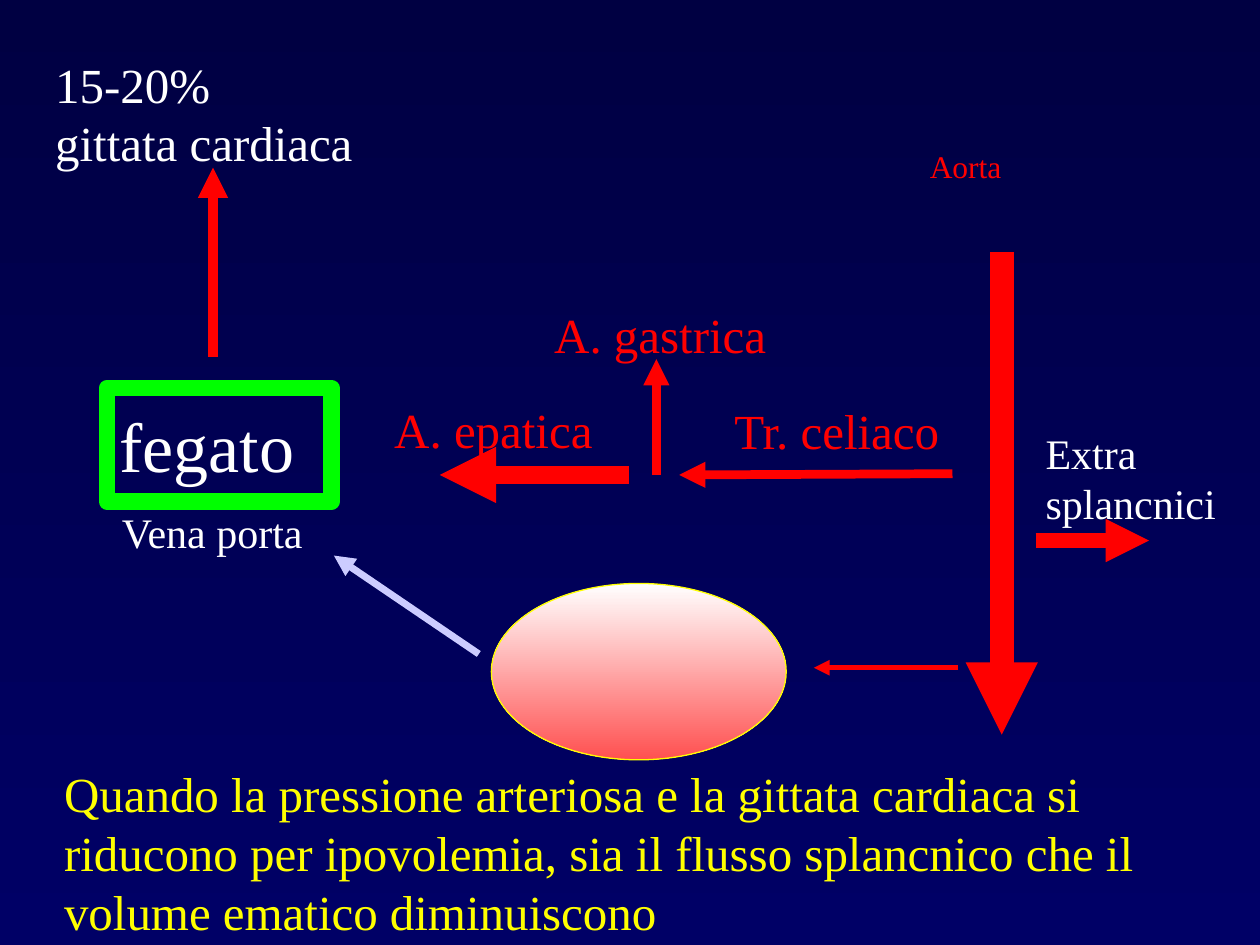
from dataclasses import dataclass

from lxml.etree import SubElement
from pptx import Presentation
from pptx.dml.color import RGBColor
from pptx.enum.shapes import MSO_CONNECTOR, MSO_SHAPE
from pptx.enum.text import MSO_ANCHOR, MSO_AUTO_SIZE, PP_ALIGN
from pptx.oxml.ns import qn
from pptx.util import Pt


@dataclass(frozen=True)
class Theme:
    font: str = "Times New Roman"
    small: int = 18
    label: int = 24
    body: int = 28
    organ: int = 40
    white: str = "FFFFFF"
    artery: str = "FF0000"
    vein: str = "CCCCFF"
    liver: str = "00FF00"
    note: str = "FFFF00"
    bowel: str = "FF5050"
    sky_top: str = "000042"
    sky_bottom: str = "000066"


THEME = Theme()


def rgb(value):
    return RGBColor.from_string(value)


def fill_downwards(fill, top, bottom):
    """Fill with a vertical gradient from top to bottom."""
    fill.gradient()
    fill.gradient_angle = 270
    for stop, color, position in zip(fill.gradient_stops, (top, bottom), (0, 1)):
        stop.color.rgb = rgb(color)
        stop.position = position


def write(frame, text, size, color, wrap=False):
    frame.text = text
    frame.word_wrap = wrap
    frame.auto_size = MSO_AUTO_SIZE.SHAPE_TO_FIT_TEXT
    for paragraph in frame.paragraphs:
        paragraph.alignment = PP_ALIGN.LEFT
        for run in paragraph.runs:
            run.font.name = THEME.font
            run.font.size = Pt(size)
            run.font.color.rgb = rgb(color)


def add_label(slide, text, box, size, color, wrap=False):
    label = slide.shapes.add_textbox(*map(Pt, box))
    write(label.text_frame, text, size, color, wrap)


def add_flow(slide, start, end, width, color=THEME.artery):
    """Draw a blood-flow arrow from start to end."""
    flow = slide.shapes.add_connector(
        MSO_CONNECTOR.STRAIGHT, *map(Pt, (*start, *end)))
    flow.line.width = Pt(width)
    flow.line.color.rgb = rgb(color)
    SubElement(flow.line._get_or_add_ln(), qn("a:tailEnd"), type="triangle")
    SubElement(flow._element.spPr, qn("a:effectLst"))


def add_organ(slide, kind, box, line_color, line_width):
    organ = slide.shapes.add_shape(kind, *map(Pt, box))
    organ.shadow.inherit = False
    organ.fill.background()
    organ.line.color.rgb = rgb(line_color)
    organ.line.width = Pt(line_width)
    return organ


def add_liver(slide):
    liver = add_organ(slide, MSO_SHAPE.RECTANGLE, (61.2, 221.8, 128.2, 64.8),
                      THEME.liver, 9.5)
    write(liver.text_frame, "fegato", THEME.organ, THEME.white)
    liver.text_frame.vertical_anchor = MSO_ANCHOR.MIDDLE


def add_bowel(slide):
    bowel = add_organ(slide, MSO_SHAPE.OVAL, (280.8, 333.4, 168.5, 100.8),
                      THEME.note, 0.75)
    fill_downwards(bowel.fill, THEME.white, THEME.bowel)


def main():
    deck = Presentation()
    deck.slide_width, deck.slide_height = Pt(720), Pt(540)
    slide = deck.slides.add_slide(deck.slide_layouts[6])
    fill_downwards(slide.background.fill, THEME.sky_top, THEME.sky_bottom)

    add_flow(slide, (273.6, 373.7), (190.8, 317.5), 4, THEME.vein)
    add_liver(slide)
    add_bowel(slide)

    arteries = [
        ((121.7, 203.8), (121.7, 95.8), 5.75),
        ((572.4, 144), (572.4, 419.8), 13.75),
        ((544.3, 270.7), (388.1, 271.4), 5),
        ((359.3, 271.4), (251.3, 271.4), 10.75),
        ((375.1, 271.4), (375.1, 205.2), 5),
        ((547.2, 381.6), (465.1, 381.6), 3),
        ((591.8, 308.9), (656.6, 308.9), 8.25),
    ]
    for start, end, width in arteries:
        add_flow(slide, start, end, width)

    labels = [
        ("Vena porta", (62.6, 285.8, 129.6, 36), THEME.label, THEME.white),
        ("Aorta", (524.2, 80.6, 94.3, 45.4), THEME.small, THEME.artery),
        ("Extra\nsplancnici", (590.4, 240.5, 117.4, 64.8),
         THEME.label, THEME.white),
        ("A. epatica", (218.2, 224.6, 133.9, 41), THEME.body, THEME.artery),
        ("A. gastrica", (309.6, 170.6, 143.3, 41), THEME.body, THEME.artery),
        ("Tr. celiaco", (412.6, 225.4, 140.4, 41), THEME.body, THEME.artery),
        ("15-20%\ngittata cardiaca", (24.5, 27.4, 201.6, 74.2),
         THEME.body, THEME.white),
    ]
    for label in labels:
        add_label(slide, *label)
    add_label(slide,
              "Quando la pressione arteriosa e la gittata cardiaca si riducono "
              "per ipovolemia, sia il flusso splancnico che il volume ematico "
              "diminuiscono",
              (29.5, 432.7, 656.6, 108), THEME.body, THEME.note, wrap=True)

    deck.save("out.pptx")


if __name__ == "__main__":
    main()
